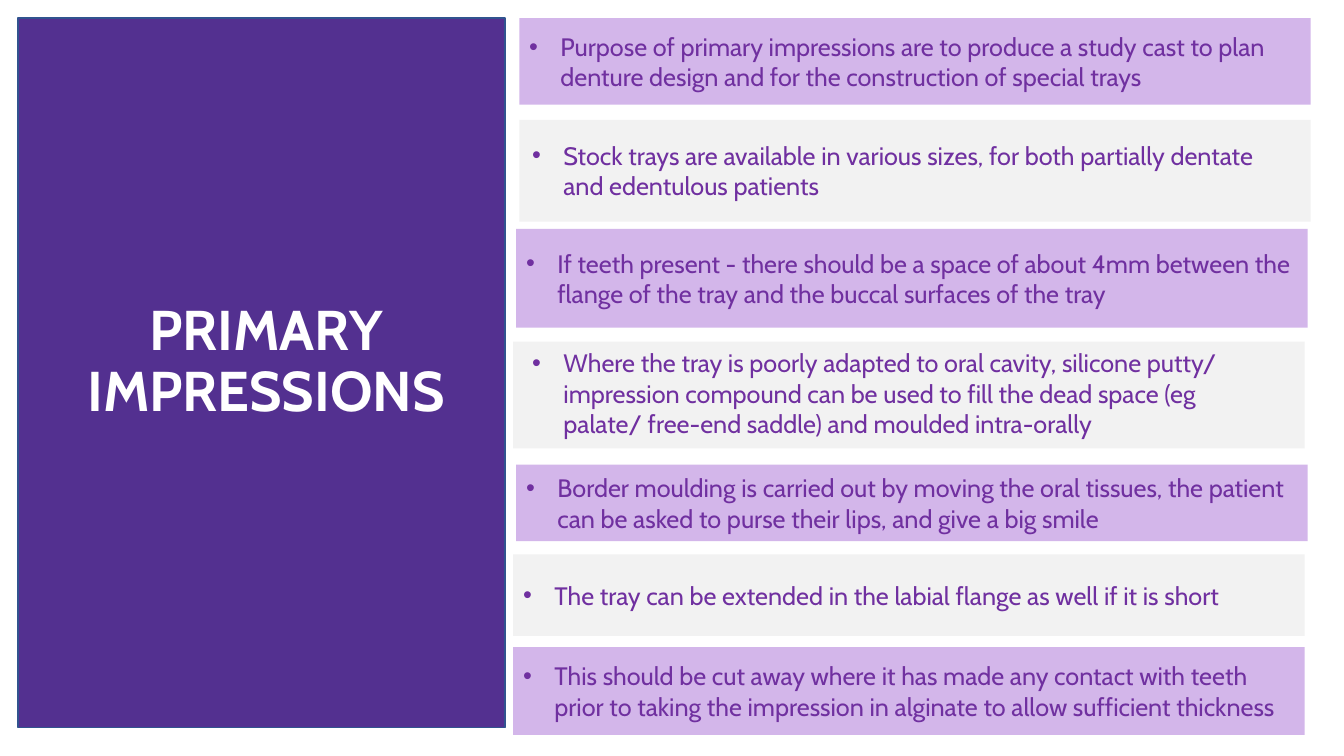
import pptx
import pptx.util
import pptx.dml.color
import pptx.enum.shapes
import pptx.enum.text
from lxml import etree

PX = 9144  # 100 px to the inch
FONT = "Cabin"
PURPLE, LILAC, GREY, WHITE = "533090", "D3B6EA", "F2F2F2", "FFFFFF"
INK, EDGE = "7030A0", "31538F"

TITLE = "PRIMARY IMPRESSIONS"
PANEL = (18, 18, 483, 704)
TITLE_BOX = (45, 295, 438, 252)
BAR_WIDTH = 785
INDENT = 31

# left, top, height, separate text box (or None), text
POINTS = [
    (515, 18, 86, None,
     "Purpose of primary impressions are to produce a study cast to plan "
     "denture design and for the construction of special trays"),
    (515, 119, 101, (518, 134, 773, 71),
     "Stock trays are available in various sizes, for both partially dentate "
     "and edentulous patients"),
    (512, 227, 98, None,
     "If teeth present - there should be a space of about 4mm between the "
     "flange of the tray and the buccal surfaces of the tray"),
    (509, 339, 106, (518, 340, 761, 101),
     "Where the tray is poorly adapted to oral cavity, silicone putty/ "
     "impression compound can be used to fill the dead space (eg palate/ "
     "free-end saddle) and moulded intra-orally"),
    (512, 461, 76, None,
     "Border moulding is carried out by moving the oral tissues, the patient "
     "can be asked to purse their lips, and give a big smile"),
    (509, 550, 81, None,
     "The tray can be extended in the labial flange as well if it is short"),
    (509, 642, 87, None,
     "This should be cut away where it has made any contact with teeth prior "
     "to taking the impression in alginate to allow sufficient thickness"),
]


def colour(value):
    return pptx.dml.color.RGBColor.from_string(value)


def emu(lengths):
    return [length * PX for length in lengths]


def add_rect(page, place, fill, edge=None):
    rect = page.shapes.add_shape(
        pptx.enum.shapes.MSO_SHAPE.RECTANGLE, *emu(place))
    rect.shadow.inherit = False
    rect.fill.solid()
    rect.fill.fore_color.rgb = colour(fill)
    if edge:
        rect.line.color.rgb = colour(edge)
        rect.line.width = pptx.util.Pt(1)
    else:
        rect.line.fill.background()
    return rect


def add_bullet(para):
    props = para._p.get_or_add_pPr()
    props.set("marL", str(INDENT * PX))
    props.set("indent", str(-INDENT * PX))
    tint = etree.SubElement(props, pptx.oxml.ns.qn("a:buClr"))
    etree.SubElement(tint, pptx.oxml.ns.qn("a:srgbClr"), val=INK)
    etree.SubElement(props, pptx.oxml.ns.qn("a:buFont"), typeface="Arial")
    etree.SubElement(props, pptx.oxml.ns.qn("a:buChar"), char="•")


def write(box, text, size, ink, align, margin, anchor, bullet=False, bold=False):
    frame = box.text_frame
    frame.word_wrap = True
    frame.vertical_anchor = anchor
    frame.margin_left = frame.margin_right = 10 * PX
    frame.margin_top = frame.margin_bottom = margin * PX
    frame.text = text
    para = frame.paragraphs[0]
    para.alignment = align
    if bullet:
        add_bullet(para)
    for span in para.runs:
        span.font.name = FONT
        span.font.size = pptx.util.Pt(size)
        span.font.bold = bold
        span.font.color.rgb = colour(ink)
    return para


ALIGN = pptx.enum.text.PP_ALIGN
ANCHOR = pptx.enum.text.MSO_ANCHOR

deck = pptx.Presentation()
deck.slide_width, deck.slide_height = emu((1333, 750))
page = deck.slides.add_slide(deck.slide_layouts[6])

# Title panel
add_rect(page, PANEL, PURPLE, EDGE)
title_box = page.shapes.add_textbox(*emu(TITLE_BOX))
title = write(title_box, TITLE, 40, WHITE, ALIGN.CENTER, 5, ANCHOR.TOP, bold=True)
title.line_spacing = 0.9

# Points on bars of alternating colour
for number, (left, top, height, text_place, text) in enumerate(POINTS):
    box = add_rect(page, (left, top, BAR_WIDTH, height), (LILAC, GREY)[number % 2])
    margin, anchor = 10, ANCHOR.MIDDLE
    if text_place:
        box = page.shapes.add_textbox(*emu(text_place))
        margin, anchor = 5, ANCHOR.TOP
    write(box, text, 18, INK, ALIGN.LEFT, margin, anchor, bullet=True)

deck.save("out.pptx")
